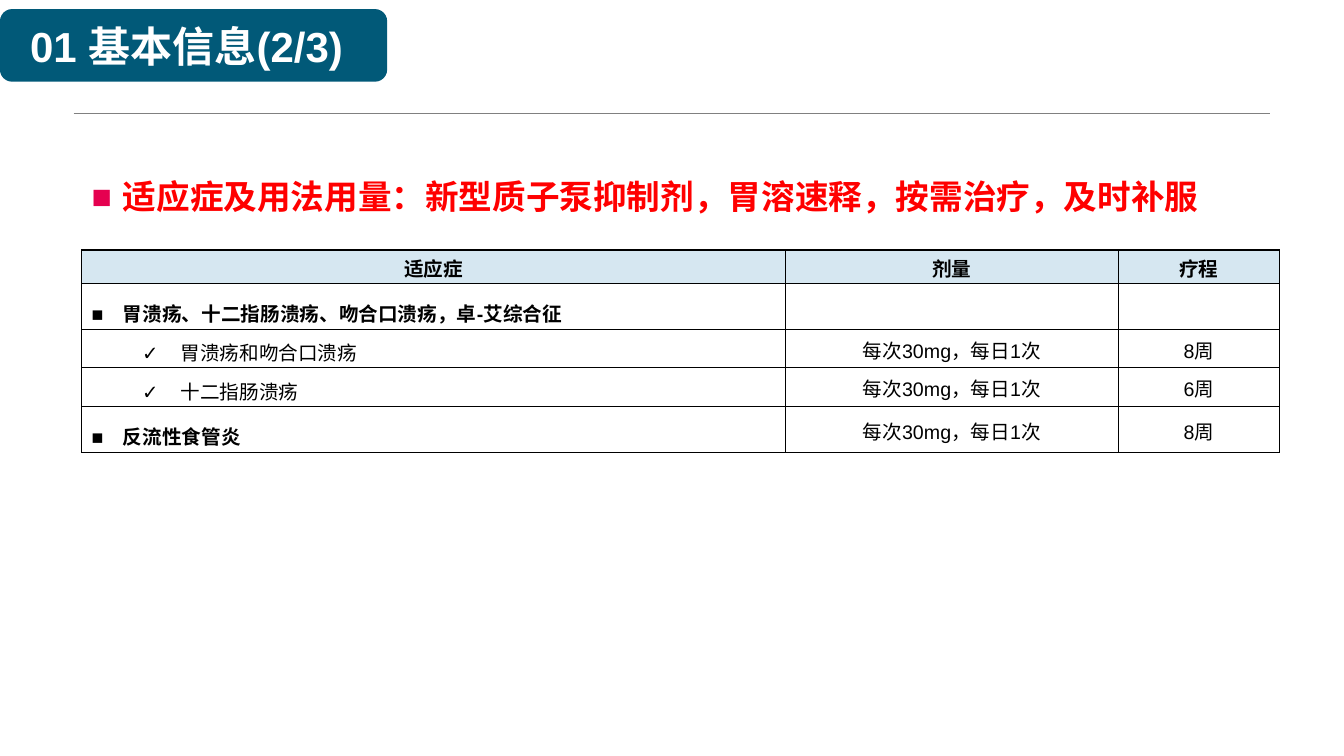
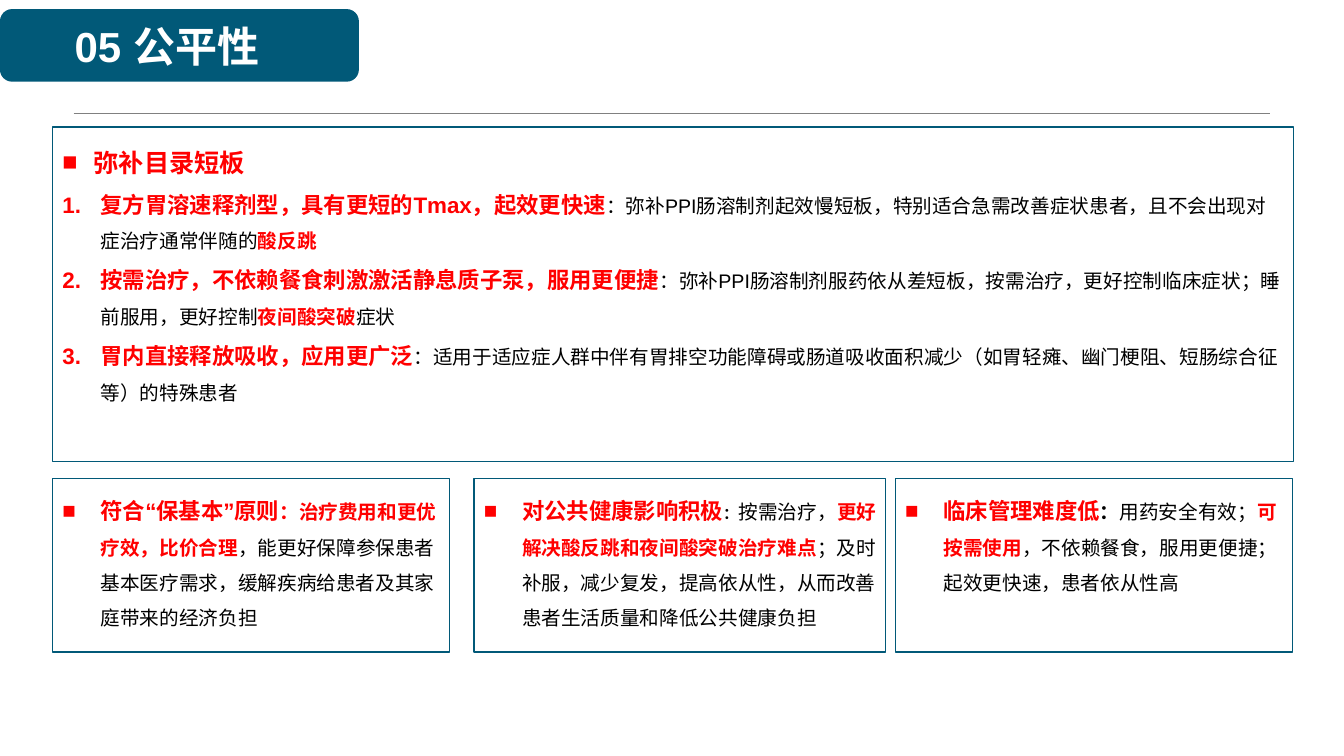
from dataclasses import dataclass, field

import pptx
import pptx.dml.color
import pptx.enum.lang
import pptx.enum.shapes
import pptx.enum.text
import pptx.oxml.ns
import pptx.util
from lxml import etree

Inches, Pt = pptx.util.Inches, pptx.util.Pt
RGB = pptx.dml.color.RGBColor.from_string
ALIGN = pptx.enum.text.PP_ALIGN
ANCHOR = pptx.enum.text.MSO_ANCHOR
SHAPE = pptx.enum.shapes.MSO_SHAPE
qn = pptx.oxml.ns.qn


def style(size, color, bold):
    return {"size": size, "color": color, "bold": bold}


@dataclass(frozen=True)
class Theme:
    font: str = "Arial"
    teal: str = "015978"
    rule: str = "808080"
    header: str = "D6E7F1"
    white: str = "FFFFFF"
    black: str = "000000"
    marker: str = "E50150"
    styles: dict = field(default_factory=lambda: {
        "title": style(30, "FFFFFF", True),
        "heading": style(24, "FF0000", True),
        "section": style(18, "FF0000", True),
        "lead": style(16, "FF0000", True),
        "key": style(14, "FF0000", True),
        "body": style(14, "000000", False),
        "strong": style(14, "000000", True),
        "colon": style(11, "000000", True),
    })


THEME = Theme()

# Paragraph formats: left indent, hanging indent, line spacing, bullet
SQUARE = {"left": 0.31, "hang": 0.31, "spacing": 1.5, "bullet": "■"}
WIDE_SQUARE = {**SQUARE, "left": 0.38, "hang": 0.38}
NUMBER = {**WIDE_SQUARE, "bullet": "1."}
TICK = {"left": 0.88, "hang": 0.38, "spacing": 1.2, "bullet": "✓", "level": 1}
HEADING = {"left": 0.31, "hang": 0.31, "bullet": "■", "bullet_color": THEME.marker}
CENTER = {"align": ALIGN.CENTER}

USAGE = {
    "title": "01 基本信息(2/3)", "band": 3.84, "title_width": 3.7,
    "heading": "适应症及用法用量：新型质子泵抑制剂，胃溶速释，按需治疗，及时补服",
}
DOSE = "每次30mg，每日1次"
TABLE_HEAD = ["适应症", "剂量", "疗程"]
TABLE_ROWS = [  # format and style of the first cell, then the texts
    (SQUARE, "strong", ["胃溃疡、十二指肠溃疡、吻合口溃疡，卓-艾综合征", "", ""]),
    (TICK, "body", ["胃溃疡和吻合口溃疡", DOSE, "8周"]),
    (TICK, "body", ["十二指肠溃疡", DOSE, "6周"]),
    (SQUARE, "strong", ["反流性食管炎", DOSE, "8周"]),
]
COL_WIDTHS = [6.98, 3.3, 1.6]
ROW_HEIGHTS = [0.33, 0.46, 0.38, 0.38, 0.46]

FAIRNESS = {"title": "05 公平性", "band": 3.56, "title_width": 3.31}
GAPS = [
    (SQUARE, [("section", "弥补目录短板")]),
    (NUMBER, [
        ("lead", "复方胃溶速释剂型，具有更短的Tmax，起效更快速"),
        ("body", "：弥补PPI肠溶制剂起效慢短板，特别适合急需改善症状患者，"
                 "且不会出现对症治疗通常伴随的"),
        ("key", "酸反跳")]),
    (NUMBER, [
        ("lead", "按需治疗，不依赖餐食刺激激活静息质子泵，服用更便捷"),
        ("body", "：弥补PPI肠溶制剂服药依从差短板，按需治疗，更好控制临床症状；"
                 "睡前服用，更好控制"),
        ("key", "夜间酸突破"),
        ("body", "症状")]),
    (NUMBER, [
        ("lead", "胃内直接释放吸收，应用更广泛"),
        ("body", "：适用于适应症人群中伴有胃排空功能障碍或肠道吸收面积减少"
                 "（如胃轻瘫、幽门梗阻、短肠综合征等）的特殊患者")]),
]
BENEFITS = [  # width and runs of each box
    (3.94, [
        ("lead", "符合“保基本”原则"),
        ("key", "：治疗费用和更优疗效，比价合理"),
        ("body", "，能更好保障参保患者基本医疗需求，缓解疾病给患者及其家庭带来的经济负担")]),
    (4.08, [
        ("lead", "对公共健康影响积极"),
        ("colon", "："),
        ("body", "按需治疗，"),
        ("key", "更好解决酸反跳和夜间酸突破治疗难点"),
        ("body", "；及时补服，减少复发，提高依从性，从而改善患者生活质量和降低公共健康负担")]),
    (3.94, [
        ("lead", "临床管理难度低"),
        ("strong", "："),
        ("body", "用药安全有效；"),
        ("key", "可按需使用"),
        ("body", "，不依赖餐食，服用更便捷；起效更快速，患者依从性高")]),
]
BOX_LEFT, BOX_PITCH = 0.52, 4.18
PANEL_INSET, BENEFIT_INSET = 0.1, 0.05  # right text insets


def box(left, top, width, height):
    return [Inches(v) for v in (left, top, width, height)]


def add_run(p, name, text):
    look = THEME.styles[name]
    r = p.add_run()
    r.text = text
    values = {"size": Pt(look["size"]), "bold": look["bold"], "name": THEME.font,
              "language_id": pptx.enum.lang.MSO_LANGUAGE_ID.SIMPLIFIED_CHINESE}
    for key, value in values.items():
        setattr(r.font, key, value)
    r.font.color.rgb = RGB(look["color"])
    etree.SubElement(r._r.get_or_add_rPr(), qn("a:ea"), typeface=THEME.font)


def format_paragraph(p, fmt):
    p.level = fmt.get("level", 0)
    p.alignment = fmt.get("align", ALIGN.LEFT)
    p.space_before = Pt(0)
    p.line_spacing = fmt.get("spacing", 1.0)
    if "bullet" not in fmt:
        return
    pPr = p._p.get_or_add_pPr()
    pPr.set("marL", str(Inches(fmt["left"])))
    pPr.set("indent", str(-Inches(fmt["hang"])))
    if "bullet_color" in fmt:
        color = etree.SubElement(pPr, qn("a:buClr"))
        etree.SubElement(color, qn("a:srgbClr"), val=fmt["bullet_color"])
    etree.SubElement(pPr, qn("a:buFont"), typeface=THEME.font)
    if fmt["bullet"] == "1.":
        etree.SubElement(pPr, qn("a:buAutoNum"), type="arabicPeriod")
    else:
        etree.SubElement(pPr, qn("a:buChar"), char=fmt["bullet"])


def fill_text(tf, paragraphs):
    tf.word_wrap = True
    tf.auto_size = pptx.enum.text.MSO_AUTO_SIZE.NONE
    tf.vertical_anchor = ANCHOR.TOP
    for i, (fmt, runs) in enumerate(paragraphs):
        p = tf.add_paragraph() if i else tf.paragraphs[0]
        format_paragraph(p, fmt)
        for name, text in runs:
            add_run(p, name, text)


def add_block(slide, kind, place, fill, line=None):
    sp = slide.shapes.add_shape(kind, *place)
    sp.shadow.inherit = False
    sp.fill.solid()
    sp.fill.fore_color.rgb = RGB(fill)
    if line:
        sp.line.color.rgb = RGB(line)
        sp.line.width = Pt(1)
    else:
        sp.line.fill.background()
    return sp


def add_titled_slide(prs, content):
    """Add a slide with its title over the teal band and the thin rule."""
    slide = prs.slides.add_slide(prs.slide_layouts[5])
    rule = slide.shapes.add_connector(
        pptx.enum.shapes.MSO_CONNECTOR.STRAIGHT,
        Inches(0.73), Inches(1.12), Inches(12.6), Inches(1.12))
    rule.line.color.rgb = RGB(THEME.rule)
    rule.line.width = Pt(0.25)
    etree.SubElement(rule._element.spPr, qn("a:effectLst"))
    band = add_block(slide, SHAPE.ROUNDED_RECTANGLE,
                     box(0, 0.09, content["band"], 0.72), THEME.teal)
    title = slide.shapes.title
    band._element.addnext(title._element)
    title.left, title.top, title.width, title.height = box(
        0, 0.15, content["title_width"], 0.61)
    fill_text(title.text_frame, [(CENTER, [("title", content["title"])])])
    return slide


def border_cell(cell):
    tcPr = cell._tc.get_or_add_tcPr()
    for i, side in enumerate(("lnL", "lnR", "lnT", "lnB")):
        ln = etree.Element(qn("a:" + side), w=str(Pt(1)))
        fill = etree.SubElement(ln, qn("a:solidFill"))
        etree.SubElement(fill, qn("a:srgbClr"), val=THEME.black)
        tcPr.insert(i, ln)


def fill_cell(cell, fmt, name, text, color):
    cell.vertical_anchor = ANCHOR.MIDDLE
    cell.margin_top, cell.margin_bottom = Inches(0.08), Inches(0.02)
    cell.fill.solid()
    cell.fill.fore_color.rgb = RGB(color)
    border_cell(cell)
    p = cell.text_frame.paragraphs[0]
    if text:
        format_paragraph(p, fmt)
        add_run(p, name, text)


def add_dose_table(slide):
    table = slide.shapes.add_table(
        len(ROW_HEIGHTS), len(COL_WIDTHS),
        *box(0.81, 2.48, sum(COL_WIDTHS), sum(ROW_HEIGHTS))).table
    for col, width in zip(table.columns, COL_WIDTHS):
        col.width = Inches(width)
    for row, height in zip(table.rows, ROW_HEIGHTS):
        row.height = Inches(height)
    for c, text in enumerate(TABLE_HEAD):
        fill_cell(table.cell(0, c), CENTER, "strong", text, THEME.header)
    for r, (fmt, name, texts) in enumerate(TABLE_ROWS, 1):
        for c, text in enumerate(texts):
            look = (CENTER, "body") if c else (fmt, name)
            fill_cell(table.cell(r, c), *look, text, THEME.white)


def build_usage(prs):
    slide = add_titled_slide(prs, USAGE)
    add_dose_table(slide)
    heading = slide.shapes.add_textbox(*box(0.81, 1.7, 11.88, 0.5))
    fill_text(heading.text_frame, [(HEADING, [("heading", USAGE["heading"])])])


def build_fairness(prs):
    slide = add_titled_slide(prs, FAIRNESS)
    panels = [(box(BOX_LEFT, 1.26, 12.31, 3.32), PANEL_INSET, GAPS)]
    for i, (width, runs) in enumerate(BENEFITS):
        panels.append((box(BOX_LEFT + i * BOX_PITCH, 4.75, width, 1.72),
                       BENEFIT_INSET, [(WIDE_SQUARE, runs)]))
    for place, inset, paragraphs in panels:
        sp = add_block(slide, SHAPE.RECTANGLE, place, THEME.white, THEME.teal)
        sp.text_frame.margin_right = Inches(inset)
        fill_text(sp.text_frame, paragraphs)


def main():
    prs = pptx.Presentation()
    prs.slide_width, prs.slide_height = Inches(13.33), Inches(7.5)
    build_usage(prs)
    build_fairness(prs)
    prs.save("out.pptx")


if __name__ == "__main__":
    main()
